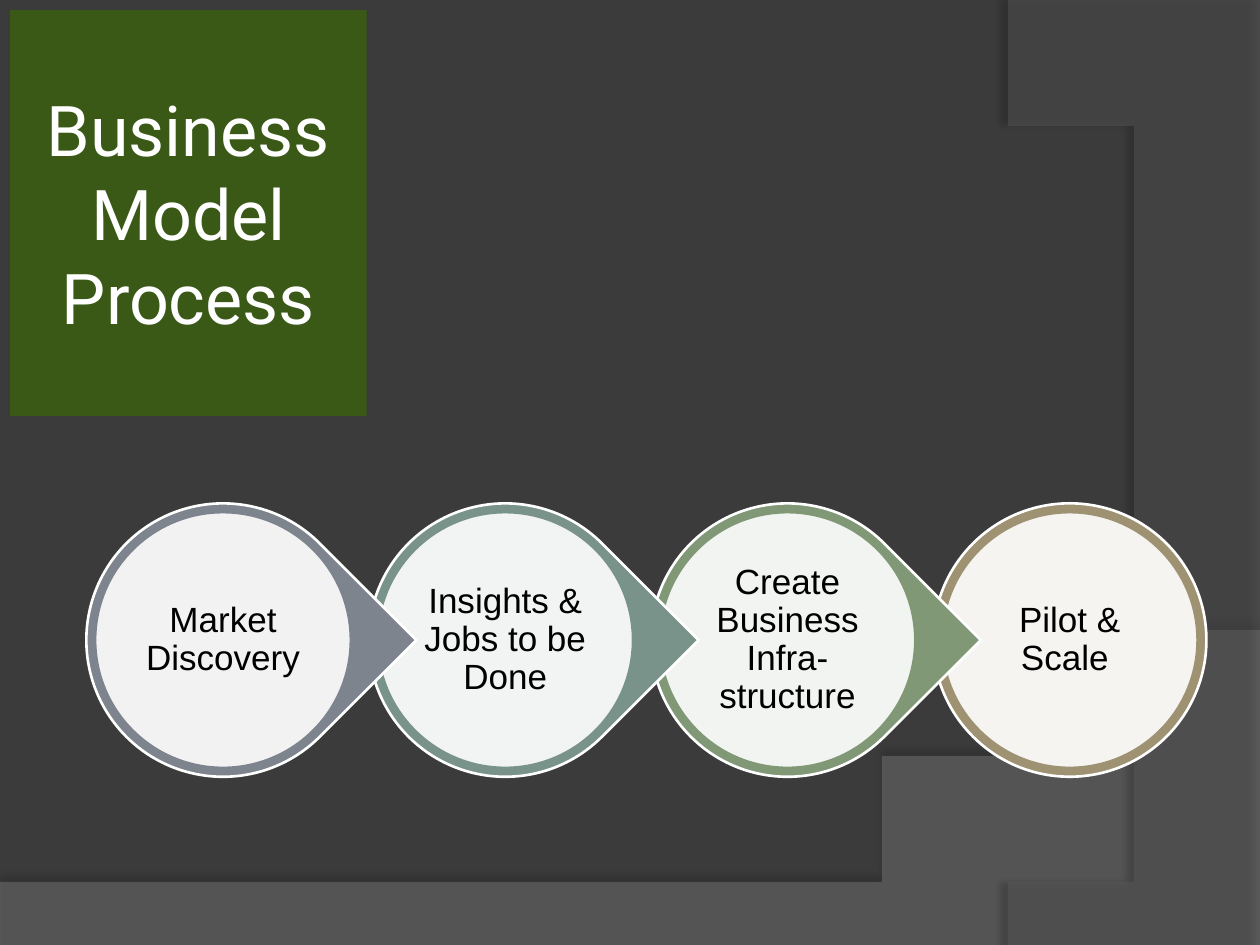
from dataclasses import dataclass

from lxml import etree
from pptx import Presentation
from pptx.dml.color import RGBColor
from pptx.enum import shapes, text
from pptx.oxml.ns import qn
from pptx.util import Inches, Pt

COLORS = {
    "background": "3B3B3B", "title": "3A5917", "white": "FFFFFF", "black": "000000",
    "wave": "7F7F7F", "arc": "5E5E5E",
    "slate": "7E848D", "teal": "7A938A", "green": "819877", "tan": "9E9273",
}
Point = tuple[float, float]


@dataclass
class Step:
    label: str
    color: str


@dataclass
class Swoosh:
    start: Point
    controls: tuple[Point, Point]
    end: Point
    corners: list[Point]
    color: str
    opacity: int
    shadow_opacity: int
    shadow_distance: float
    shadow_angle: int


STEPS = [
    Step("Market Discovery", "slate"),
    Step("Insights & Jobs to be Done", "teal"),
    Step("Create Business Infra- structure", "green"),
    Step("Pilot & Scale ", "tan"),
]
SWOOSHES = [
    Swoosh((10, 5.2), ((5.59, 7.29), (3.91, 7.19)), (0, 7.05),
           [(0, 7.5), (10, 7.5)], "wave", 45, 35, 3.5, 270),
    Swoosh((8.21, 7.5), ((9.35, 6.19), (10.18, 3)), (8, 0),
           [(10, 0.02), (10, 7.5)], "arc", 40, 45, 4, 180),
]
FIRST_CENTER, CENTER_Y, PITCH = 1.77, 5.08, 2.24
OUTER, INNER, LABEL = 2.17, 2.03, 1.45


def rgb(name: str) -> RGBColor:
    return RGBColor.from_string(COLORS[name])


def set_alpha(color_element, percent: int) -> None:
    etree.SubElement(color_element, qn("a:alpha")).set("val", str(percent * 1000))


def fill_shape(sp, color: str, opacity: int = 100) -> None:
    sp.shadow.inherit = False
    sp.fill.solid()
    sp.fill.fore_color.rgb = rgb(color)
    if opacity < 100:
        set_alpha(sp._element.spPr.find(qn("a:solidFill"))[0], opacity)


def set_line(sp, color: str) -> None:
    sp.line.color.rgb = rgb(color)
    sp.line.width = Pt(1.5)


def write(tf, words: str, size: int, font: str, color: str) -> None:
    tf.text = words
    tf.word_wrap = True
    tf.auto_size = text.MSO_AUTO_SIZE.NONE
    tf.vertical_anchor = text.MSO_ANCHOR.MIDDLE
    p = tf.paragraphs[0]
    p.alignment = text.PP_ALIGN.CENTER
    r = p.runs[0]
    r.font.size, r.font.name = Pt(size), font
    r.font.color.rgb = rgb(color)


def curve(swoosh: Swoosh, count: int = 60) -> list[Point]:
    """Points along the cubic Bezier edge, without its start."""
    knots = (swoosh.start, *swoosh.controls, swoosh.end)
    points = []
    for i in range(1, count + 1):
        t = i / count
        weights = ((1 - t) ** 3, 3 * t * (1 - t) ** 2, 3 * t * t * (1 - t), t ** 3)
        points.append(tuple(sum(w * k[axis] for w, k in zip(weights, knots))
                            for axis in (0, 1)))
    return points


def draw_swoosh(slide, swoosh: Swoosh) -> None:
    builder = slide.shapes.build_freeform(*swoosh.start, scale=Inches(1))
    builder.add_line_segments(curve(swoosh) + swoosh.corners, close=True)
    sp = builder.convert_to_shape()
    fill_shape(sp, swoosh.color, swoosh.opacity)
    sp.line.fill.background()
    effects = sp._element.spPr.find(qn("a:effectLst"))
    shadow = etree.SubElement(effects, qn("a:outerShdw"))
    shadow.set("blurRad", str(Pt(4)))
    shadow.set("dist", str(Pt(swoosh.shadow_distance)))
    shadow.set("dir", str(swoosh.shadow_angle * 60000))
    shadow.set("rotWithShape", "0")
    color = etree.SubElement(shadow, qn("a:srgbClr"))
    color.set("val", COLORS["black"])
    set_alpha(color, swoosh.shadow_opacity)


def square(center_x: float, size: float) -> list[int]:
    return [Inches(v) for v in (center_x - size / 2, CENTER_Y - size / 2, size, size)]


def draw_step(slide, step: Step, center_x: float, is_last: bool) -> None:
    kinds = shapes.MSO_SHAPE
    outer = slide.shapes.add_shape(kinds.OVAL if is_last else kinds.TEAR,
                                   *square(center_x, OUTER))
    if not is_last:
        outer.rotation = 45
    fill_shape(outer, step.color)
    set_line(outer, "white")

    inner = slide.shapes.add_shape(kinds.OVAL, *square(center_x, INNER))
    fill_shape(inner, "white", 90)
    set_line(inner, step.color)

    tf = slide.shapes.add_textbox(*square(center_x, LABEL)).text_frame
    tf.margin_left = tf.margin_right = tf.margin_top = tf.margin_bottom = Inches(0.03)
    write(tf, step.label, 20, "Arial", "black")
    tf.paragraphs[0].line_spacing = 0.9


def main() -> None:
    prs = Presentation()
    prs.slide_width, prs.slide_height = Inches(10), Inches(7.5)
    slide = prs.slides.add_slide(prs.slide_layouts[5])

    # Background
    slide.background.fill.solid()
    slide.background.fill.fore_color.rgb = rgb("background")
    for swoosh in SWOOSHES:
        draw_swoosh(slide, swoosh)

    # Title
    title = slide.shapes.title
    title.left, title.top = Inches(0.08), Inches(0.08)
    title.width, title.height = Inches(2.83), Inches(3.22)
    title.fill.solid()
    title.fill.fore_color.rgb = rgb("title")
    write(title.text_frame, "Business Model Process", 40, "Roboto", "white")

    # Process steps, drawn right to left so each tip overlaps the next step
    last = len(STEPS) - 1
    for i in range(last, -1, -1):
        draw_step(slide, STEPS[i], FIRST_CENTER + i * PITCH, i == last)

    prs.save("out.pptx")


if __name__ == "__main__":
    main()
